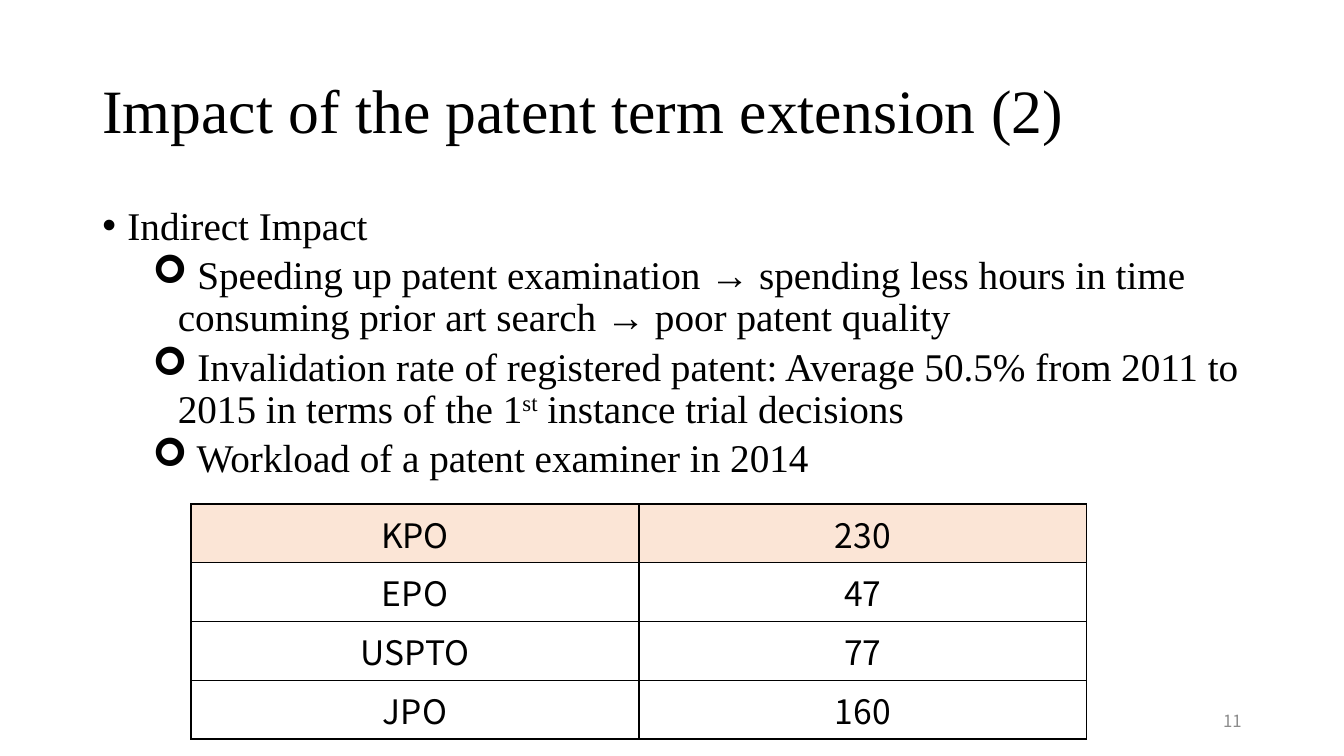
from pptx import Presentation
from pptx.dml.color import RGBColor
from pptx.enum.text import MSO_ANCHOR, PP_ALIGN
from pptx.oxml import parse_xml
from pptx.oxml.ns import nsdecls
from pptx.util import Pt

COLORS = {"text": "000000", "number": "8C8C8C", "highlight": "FBE5D6", "border": "000000"}
SERIF, SANS = "Times New Roman", "Noto Sans CJK KR"


def add_text(p, text, size=28, font=SERIF, color="text", align=None, baseline=None):
    r = p.add_run()
    r.text = text
    r.font.size = Pt(size)
    r.font.color.rgb = RGBColor.from_string(COLORS[color])
    rPr = r.font._element
    if baseline:
        rPr.set("baseline", str(baseline))
    for tag in ("latin", "ea", "cs"):
        rPr.append(parse_xml(f'<a:{tag} {nsdecls("a")} typeface="{font}"/>'))
    if align is not None:
        p.alignment = align


def add_box(left, top, width, height, anchor):
    tf = s.shapes.add_textbox(Pt(left), Pt(top), Pt(width), Pt(height)).text_frame
    tf.word_wrap = True
    tf.vertical_anchor = anchor
    return tf


prs = Presentation()
prs.slide_width, prs.slide_height = Pt(960), Pt(540)
s = prs.slides.add_slide(prs.slide_layouts[6])

# Title
p = add_box(66, 28.75, 828, 104.4, MSO_ANCHOR.MIDDLE).paragraphs[0]
p.line_spacing = 0.9
add_text(p, "Impact of the patent term extension (2)", size=44)

# Bullets: level and runs, each run with its baseline shift
bullets = [
    (0, [("Indirect Impact", None)]),
    (1, [(" Speeding up patent examination → spending less hours in time "
          "consuming prior art search → poor patent quality", None)]),
    (1, [(" Invalidation rate of registered patent: Average 50.5% from 2011 to 2015 "
          "in terms of the 1", None), ("st", 30000), (" instance trial decisions", None)]),
    (1, [(" Workload of a patent examiner in 2014", None)]),
]
tf = add_box(66, 143.75, 828, 342.6, MSO_ANCHOR.TOP)
for i, (level, runs) in enumerate(bullets):
    p = tf.add_paragraph() if i else tf.paragraphs[0]
    p.level = level
    p.line_spacing = 0.9
    p.space_before = Pt(5 if level else 10)
    pPr = p._p.get_or_add_pPr()
    pPr.set("marL", str(Pt(18 + 36 * level)))
    pPr.set("indent", str(-Pt(18)))
    bullet_font, char = ("Wingdings", "➢") if level else ("Arial", "•")
    pPr.append(parse_xml(f'<a:buFont {nsdecls("a")} typeface="{bullet_font}"/>'))
    pPr.append(parse_xml(f'<a:buChar {nsdecls("a")} char="{char}"/>'))
    for text, baseline in runs:
        add_text(p, text, baseline=baseline)

# Workload table
workload = [("KPO", "230"), ("EPO", "47"), ("USPTO", "77"), ("JPO", "160")]
row_height = 42
table = s.shapes.add_table(len(workload), 2, Pt(136.4), Pt(360),
                           Pt(640), Pt(row_height * len(workload))).table
table.first_row = table.horz_banding = False
for row, values in enumerate(workload):
    table.rows[row].height = Pt(row_height)
    for col, value in enumerate(values):
        cell = table.cell(row, col)
        add_text(cell.text_frame.paragraphs[0], value, size=24, font=SANS,
                 align=PP_ALIGN.CENTER)
        tcPr = cell._tc.get_or_add_tcPr()
        for side in ("lnL", "lnR", "lnT", "lnB"):
            tcPr.append(parse_xml(
                f'<a:{side} {nsdecls("a")} w="{Pt(1)}"><a:solidFill>'
                f'<a:srgbClr val="{COLORS["border"]}"/></a:solidFill></a:{side}>'))
        if row == 0:
            cell.fill.solid()
            cell.fill.fore_color.rgb = RGBColor.from_string(COLORS["highlight"])
        else:
            cell.fill.background()

# Slide number
p = add_box(678, 500.5, 216, 28.75, MSO_ANCHOR.MIDDLE).paragraphs[0]
add_text(p, "11", size=12, font=SANS, color="number", align=PP_ALIGN.RIGHT)

prs.save("out.pptx")
